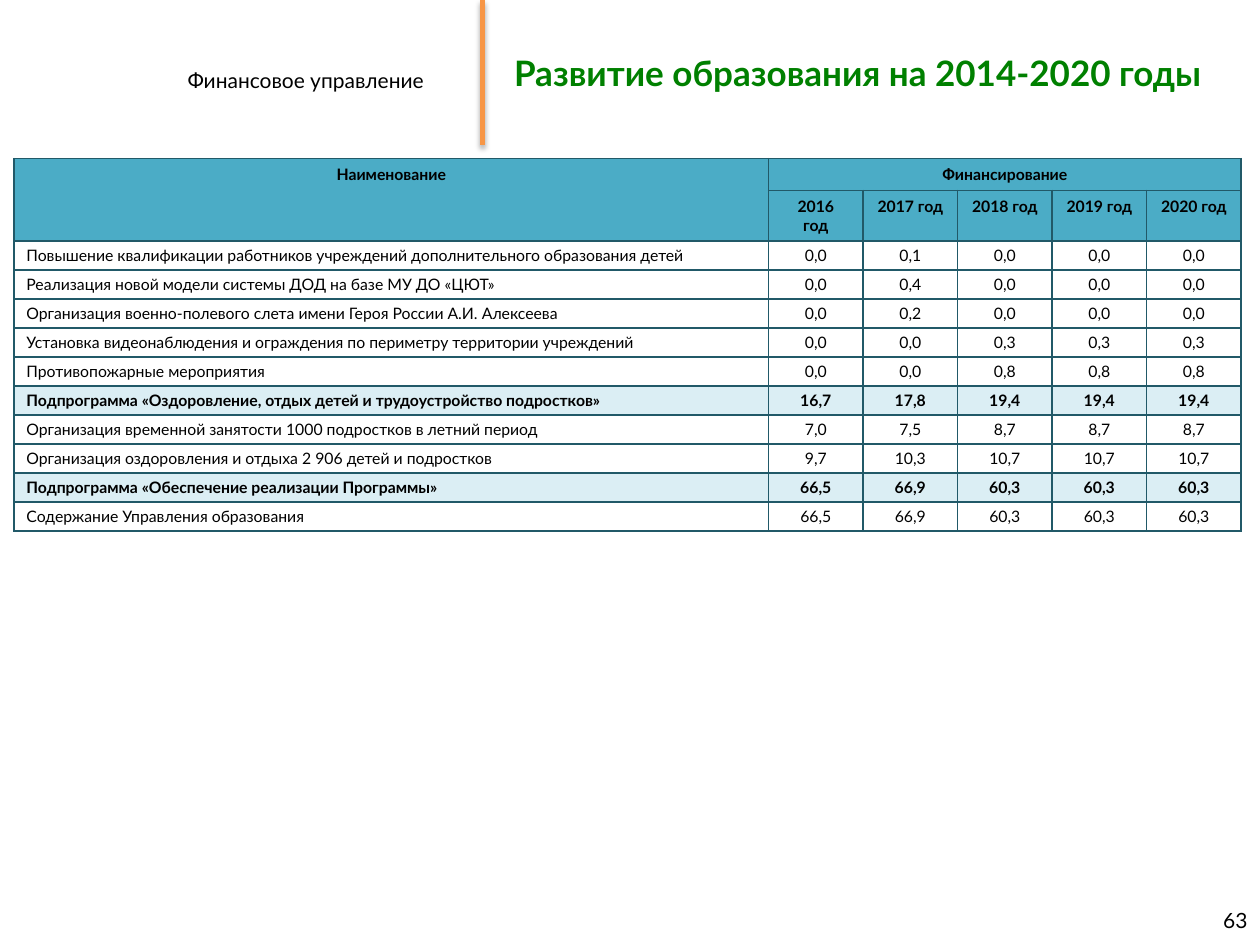
from dataclasses import dataclass
from typing import Any, NamedTuple

from lxml.etree import SubElement
from pptx import Presentation
from pptx.dml.color import RGBColor
from pptx.enum.shapes import MSO_CONNECTOR
from pptx.enum.text import MSO_ANCHOR, MSO_AUTO_SIZE, PP_ALIGN
from pptx.oxml.ns import qn
from pptx.util import Inches, Pt


@dataclass(frozen=True)
class Theme:
    font: str = "Lato"
    text: str = "000000"
    title: str = "008000"
    accent: str = "F79646"
    header: str = "4BACC6"
    subtotal: str = "DBEEF4"
    border: str = "215968"
    title_size: int = 20
    label_size: int = 12
    table_size: int = 9


class Area(NamedTuple):
    left: float
    top: float
    width: float
    height: float


class Measure(NamedTuple):
    name: str
    values: str
    subtotal: bool = False


THEME = Theme()
YEARS = ("2016\nгод", "2017 год", "2018 год", "2019 год", "2020 год")
MEASURES = (
    Measure("Повышение квалификации работников учреждений дополнительного образования детей", "0,0 0,1 0,0 0,0 0,0"),
    Measure("Реализация новой модели системы ДОД на базе МУ ДО «ЦЮТ»", "0,0 0,4 0,0 0,0 0,0"),
    Measure("Организация военно-полевого слета имени Героя России А.И. Алексеева", "0,0 0,2 0,0 0,0 0,0"),
    Measure("Установка видеонаблюдения и ограждения по периметру территории учреждений", "0,0 0,0 0,3 0,3 0,3"),
    Measure("Противопожарные мероприятия", "0,0 0,0 0,8 0,8 0,8"),
    Measure("Подпрограмма «Оздоровление, отдых детей и трудоустройство подростков»", "16,7 17,8 19,4 19,4 19,4", True),
    Measure("Организация временной занятости 1000 подростков в летний период", "7,0 7,5 8,7 8,7 8,7"),
    Measure("Организация оздоровления и отдыха 2 906 детей и подростков", "9,7 10,3 10,7 10,7 10,7"),
    Measure("Подпрограмма «Обеспечение реализации Программы»", "66,5 66,9 60,3 60,3 60,3", True),
    Measure("Содержание Управления образования", "66,5 66,9 60,3 60,3 60,3"),
)
TABLE_AREA = Area(0.11, 1.26, 9.74, 2.95)
COLUMN_WIDTHS = (5.99,) + (0.75,) * len(YEARS)
ROW_HEIGHTS = (0.25, 0.4) + (0.23,) * len(MEASURES)


def apply_format(target: Any, values: dict[str, Any]) -> None:
    for name, value in values.items():
        setattr(target, name, value)


def write_text(frame: Any, text: str, size: int, color: str = THEME.text, bold: bool = False,
               align: PP_ALIGN = PP_ALIGN.LEFT, spacing: float = 1.0) -> None:
    frame.text = text
    for para in frame.paragraphs:
        apply_format(para, {"alignment": align, "line_spacing": spacing})
        for span in para.runs:
            apply_format(span.font, {"name": THEME.font, "size": Pt(size), "bold": bold})
            span.font.color.rgb = RGBColor.from_string(color)


def add_label(page: Any, area: Area, text: str, frame_format: dict[str, Any], **style: Any) -> None:
    box = page.shapes.add_textbox(*map(Inches, area))
    apply_format(box.text_frame, frame_format)
    write_text(box.text_frame, text, THEME.label_size, **style)


def add_title(page: Any, area: Area, text: str) -> None:
    title = page.shapes.title
    apply_format(title, dict(zip(area._fields, map(Inches, area))))
    apply_format(title.text_frame, {
        "word_wrap": True, "auto_size": MSO_AUTO_SIZE.NONE, "vertical_anchor": MSO_ANCHOR.MIDDLE,
    })
    write_text(title.text_frame, text, THEME.title_size, THEME.title, True)


def add_divider(page: Any, x: float, bottom: float) -> None:
    divider = page.shapes.add_connector(MSO_CONNECTOR.STRAIGHT, Inches(x), 0, Inches(x), Inches(bottom))
    divider.line.color.rgb = RGBColor.from_string(THEME.accent)
    divider.line.width = Pt(3)
    effects = SubElement(divider._element.spPr, qn("a:effectLst"))
    shadow = SubElement(effects, qn("a:outerShdw"), blurRad=str(Pt(3.1)), dist=str(Pt(1.8)),
                        dir="5400000", rotWithShape="0")
    color = SubElement(shadow, qn("a:srgbClr"), val="000000")
    SubElement(color, qn("a:alpha"), val="35000")


def style_cell(cell: Any, fill: str | None) -> None:
    properties = cell._tc.get_or_add_tcPr()
    for side in ("lnL", "lnR", "lnT", "lnB"):
        border = SubElement(properties, qn(f"a:{side}"), w=str(Pt(1)))
        SubElement(SubElement(border, qn("a:solidFill")), qn("a:srgbClr"), val=THEME.border)
    if fill:
        cell.fill.solid()
        cell.fill.fore_color.rgb = RGBColor.from_string(fill)
    else:
        cell.fill.background()


def fill_header(table: Any) -> None:
    headings = [(0, 0, "Наименование"), (0, 1, "Финансирование")]
    headings += [(1, column, year) for column, year in enumerate(YEARS, 1)]
    for row in range(2):
        for column in range(len(COLUMN_WIDTHS)):
            style_cell(table.cell(row, column), THEME.header)
    table.cell(0, 0).merge(table.cell(1, 0))
    table.cell(0, 1).merge(table.cell(0, len(YEARS)))
    for row, column, text in headings:
        write_text(table.cell(row, column).text_frame, text, THEME.table_size, bold=True, align=PP_ALIGN.CENTER)


def fill_measure(table: Any, row: int, measure: Measure) -> None:
    for column, text in enumerate((measure.name, *measure.values.split())):
        cell = table.cell(row, column)
        style_cell(cell, THEME.subtotal if measure.subtotal else None)
        apply_format(cell, {
            "vertical_anchor": MSO_ANCHOR.MIDDLE,
            "margin_left": Inches(0.1), "margin_right": Inches(0.1),
            "margin_top": Inches(0.04), "margin_bottom": Inches(0.04),
        })
        align = PP_ALIGN.CENTER if column else PP_ALIGN.LEFT
        write_text(cell.text_frame, text, THEME.table_size, bold=measure.subtotal, align=align)


def add_funding_table(page: Any) -> None:
    frame = page.shapes.add_table(len(ROW_HEIGHTS), len(COLUMN_WIDTHS), *map(Inches, TABLE_AREA))
    table = frame.table
    apply_format(table, {"first_row": False, "horz_banding": False})
    for column, width in zip(table.columns, COLUMN_WIDTHS):
        column.width = Inches(width)
    for row, height in zip(table.rows, ROW_HEIGHTS):
        row.height = Inches(height)
    fill_header(table)
    for row, measure in enumerate(MEASURES, 2):
        fill_measure(table, row, measure)


def main() -> None:
    deck = Presentation()
    apply_format(deck, {"slide_width": Inches(10), "slide_height": Inches(7.5)})
    page = deck.slides.add_slide(deck.slide_layouts[5])
    add_label(page, Area(1.39, 0.39, 2.1, 0.36), "Финансовое управление",
              {"word_wrap": False, "auto_size": MSO_AUTO_SIZE.SHAPE_TO_FIT_TEXT}, spacing=1.5)
    add_divider(page, 3.83, 1.15)
    add_title(page, Area(3.98, 0, 6.02, 1.15), "Развитие образования на 2014-2020 годы")
    add_label(page, Area(7.67, 7.1, 2.33, 0.4), "63",
              {"word_wrap": True, "vertical_anchor": MSO_ANCHOR.MIDDLE}, align=PP_ALIGN.RIGHT)
    add_funding_table(page)
    deck.save("out.pptx")


if __name__ == "__main__":
    main()
